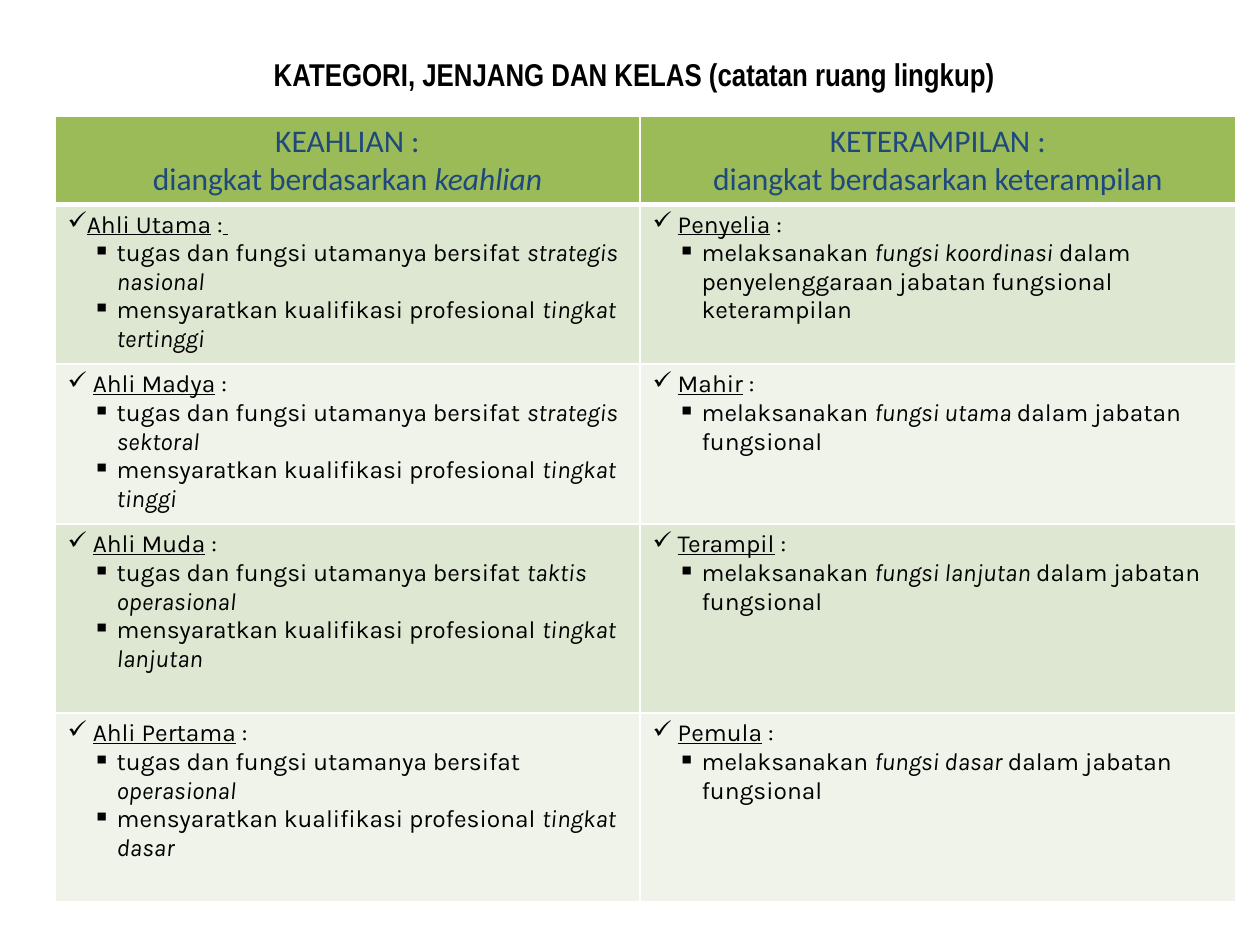
from dataclasses import dataclass

from lxml import etree
from pptx import Presentation
from pptx import util as u
from pptx.dml.color import RGBColor
from pptx.enum import text
from pptx.oxml.ns import qn

PX = u.Inches(1) // 126


@dataclass(frozen=True)
class Theme:
    black: str = "000000"
    navy: str = "1F497D"
    white: str = "FFFFFF"
    header: str = "9BBB59"
    bands: tuple = ("DEE7D1", "EFF3EA")
    title_font: str = "Arial Narrow"
    header_font: str = "Calibri"
    body_font: str = "Karla"
    large: int = 18
    body: int = 14


THEME = Theme()
TITLE = "KATEGORI, JENJANG DAN KELAS (catatan ruang lingkup)"
HEADERS = (
    ("KEAHLIAN :", "diangkat berdasarkan |keahlian|"),
    ("KETERAMPILAN :", "diangkat berdasarkan keterampilan"),
)
# Bars enclose the emphasised words: underlined in names, italic in duties.
DUTIES = "tugas dan fungsi utamanya bersifat "
QUALIFICATION = "mensyaratkan kualifikasi profesional "
EXPERT_LEVELS = (
    ("|Ahli Utama| :| |", "strategis nasional", "tingkat tertinggi"),
    (" |Ahli Madya| :", "strategis sektoral", "tingkat tinggi"),
    (" |Ahli Muda| :", "taktis operasional", "tingkat lanjutan"),
    (" |Ahli Pertama| :", "operasional", "tingkat dasar"),
)
SKILL_LEVELS = (
    (" |Penyelia| :", "|fungsi koordinasi| dalam penyelenggaraan "
                      "jabatan fungsional keterampilan"),
    (" |Mahir| :", "|fungsi utama |dalam jabatan fungsional"),
    (" |Terampil| :", "|fungsi lanjutan |dalam jabatan fungsional"),
    (" |Pemula| :", "|fungsi dasar |dalam jabatan fungsional"),
)
COLUMN_WIDTHS = (585, 596)
ROW_HEIGHTS = (88, 160, 160, 189, 189)


def set_font(para, name, size, color, bold=False):
    font = para.font
    font.name, font.size, font.bold = name, u.Pt(size), bold
    font.color.rgb = RGBColor.from_string(color)


def add_spans(para, marked, emphasis):
    """Split text at bars and emphasise every second part."""
    for index, part in enumerate(marked.split("|")):
        if part:
            span = para.add_run()
            span.text = part
            if index % 2:
                setattr(span.font, emphasis, True)


def add_bullet(para, symbol, left=0, hanging=0):
    properties = para._p.get_or_add_pPr()
    properties.set("marL", str(left * PX))
    properties.set("indent", str(-hanging * PX))
    bullet = etree.Element(qn("a:buChar"), char=symbol)
    defaults = properties.find(qn("a:defRPr"))
    if defaults is None:
        properties.append(bullet)
    else:
        defaults.addprevious(bullet)


def style_cell(cell, fill, bottom=1):
    cell.fill.solid()
    cell.fill.fore_color.rgb = RGBColor.from_string(fill)
    properties = cell._tc.get_or_add_tcPr()
    widths = {"a:lnL": 1, "a:lnR": 1, "a:lnT": 1, "a:lnB": bottom}
    for index, (side, width) in enumerate(widths.items()):
        line = etree.Element(qn(side), w=str(u.Pt(width)))
        solid = etree.SubElement(line, qn("a:solidFill"))
        etree.SubElement(solid, qn("a:srgbClr"), val=THEME.white)
        properties.insert(index, line)


def cell_paragraphs(cell, count):
    frame = cell.text_frame
    return [frame.paragraphs[0]] + [frame.add_paragraph() for _ in range(count - 1)]


def fill_header(cell, lines):
    style_cell(cell, THEME.header, bottom=3)
    for para, line in zip(cell_paragraphs(cell, len(lines)), lines):
        para.alignment = text.PP_ALIGN.CENTER
        set_font(para, THEME.header_font, THEME.large, THEME.navy)
        add_spans(para, line, "italic")


def fill_level(cell, name, duties, band):
    style_cell(cell, band)
    heading, *items = cell_paragraphs(cell, 1 + len(duties))
    set_font(heading, THEME.body_font, THEME.body, THEME.black)
    add_bullet(heading, "✓")
    add_spans(heading, name, "underline")
    for para, duty in zip(items, duties):
        set_font(para, THEME.body_font, THEME.body, THEME.black)
        add_bullet(para, "▪", left=49, hanging=24)
        add_spans(para, duty, "italic")


def add_title(page, left, top, width, height):
    box = page.shapes.add_textbox(*(n * PX for n in (left, top, width, height)))
    frame = box.text_frame
    frame.word_wrap = True
    para = frame.paragraphs[0]
    para.alignment = text.PP_ALIGN.CENTER
    para.line_spacing = 0.85
    set_font(para, THEME.title_font, THEME.large, THEME.black, bold=True)
    add_spans(para, TITLE, "italic")


def add_levels_table(page, left, top):
    size = sum(COLUMN_WIDTHS), sum(ROW_HEIGHTS)
    table = page.shapes.add_table(
        len(ROW_HEIGHTS), len(COLUMN_WIDTHS),
        *(n * PX for n in (left, top, *size))).table
    for column, width in zip(table.columns, COLUMN_WIDTHS):
        column.width = width * PX
    for row, height in zip(table.rows, ROW_HEIGHTS):
        row.height = height * PX
    for column, lines in enumerate(HEADERS):
        fill_header(table.cell(0, column), lines)
    for row, (expert, skill) in enumerate(zip(EXPERT_LEVELS, SKILL_LEVELS), 1):
        band = THEME.bands[(row - 1) % 2]
        name, scope, grade = expert
        duties = (f"{DUTIES}|{scope}|", f"{QUALIFICATION}|{grade}|")
        fill_level(table.cell(row, 0), name, duties, band)
        name, task = skill
        fill_level(table.cell(row, 1), name, (f"melaksanakan {task}",), band)


def main():
    deck = Presentation()
    deck.slide_width, deck.slide_height = 1260 * PX, 945 * PX
    page = deck.slides.add_slide(deck.slide_layouts[6])
    add_title(page, 84, 55, 1101, 45)
    add_levels_table(page, 55, 116)
    deck.save("out.pptx")


if __name__ == "__main__":
    main()
